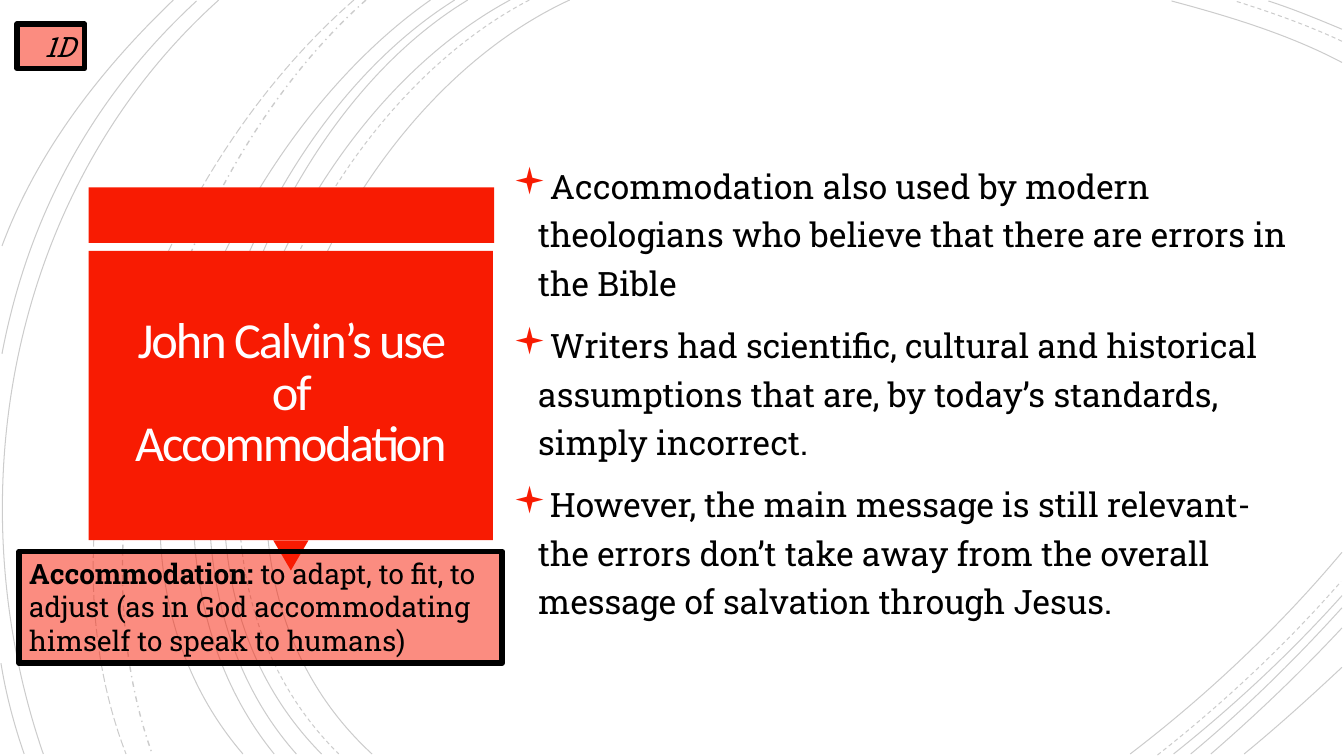
"""Build the slide on John Calvin's use of accommodation."""
from dataclasses import dataclass
from typing import Any, NamedTuple

from pptx import Presentation
from pptx.dml.color import RGBColor as Rgb
from pptx.enum.dml import MSO_LINE as Dash
from pptx.enum.shapes import MSO_SHAPE as Preset
from pptx.enum.text import MSO_ANCHOR as Anchor, PP_ALIGN as Align
from pptx.oxml.ns import qn
from pptx.oxml.xmlchemy import OxmlElement as Element
from pptx.util import Inches, Pt

Point = tuple[float, float]
Area = tuple[float, float, float, float]
Format = dict[str, Any]


@dataclass(frozen=True)
class Theme:
    red: str = "F81B02"
    black: str = "000000"
    white: str = "FFFEFF"
    heading_font: str = "Calibri"
    body_font: str = "Roboto Slab"
    bullet_font: str = "Wingdings"
    title_size: int = 36
    body_size: int = 24
    note_size: int = 20
    arc_opacity: int = 20
    note_opacity: int = 50


class Arc(NamedTuple):
    start: Point
    leave: Point
    arrive: Point
    end: Point
    dash: Any = Dash.SOLID
    width: float = 0.75


class Block(NamedTuple):
    area: Area
    preset: Any = Preset.RECTANGLE
    rotation: float = 0


class Note(NamedTuple):
    area: Area
    align: Any
    spans: list[tuple[str, Format]]


THEME = Theme()
ARCS = [
    Arc((5.65, 0), (3.15, 1.15), (1.43, 5.4), (3.69, 7.48)),
    Arc((13.31, 0.62), (12.78, 0.34), (12.18, 0.16), (11.62, 0.01)),
    Arc((11.21, 7.48), (11.97, 6.9), (12.69, 6.22), (13.31, 5.48)),
    Arc((5.25, 0), (2.85, 1.25), (1.23, 5.37), (3.36, 7.48), Dash.DASH),
    Arc((13.31, 0.41), (12.97, 0.25), (12.6, 0.12), (12.25, 0.01), Dash.DASH),
    Arc((11.48, 7.49), (12.13, 6.98), (12.75, 6.4), (13.3, 5.77), Dash.DASH),
    Arc((5.06, 0), (2.7, 1.27), (1.1, 5.37), (3.19, 7.48)),
    Arc((13.31, 0.29), (13.07, 0.19), (12.83, 0.09), (12.58, 0.01)),
    Arc((11.64, 7.48), (12.23, 7.01), (12.8, 6.48), (13.31, 5.91)),
    Arc((4.64, 0), (2.44, 1.33), (1.1, 5.41), (2.94, 7.48)),
    Arc((11.81, 7.48), (12.34, 7.04), (12.84, 6.55), (13.31, 6.03)),
    Arc((4.51, 0), (2.31, 1.38), (0.97, 5.33), (2.72, 7.48)),
    Arc((12.01, 7.48), (12.46, 7.09), (12.9, 6.67), (13.31, 6.23)),
    Arc((4.27, 0), (2.17, 1.47), (0.53, 5.29), (2.41, 7.48)),
    Arc((12.34, 7.48), (12.67, 7.21), (12.99, 6.92), (13.31, 6.62)),
    Arc((3.63, 0), (1.76, 1.66), (0.65, 5.09), (1.51, 7.48), Dash.DASH_DOT, 1),
    Arc((3.51, 0), (1.57, 1.69), (0.29, 4.99), (1.25, 7.48), Dash.LONG_DASH),
    Arc((2.17, 0), (0.11, 1.85), (-0.46, 4.9), (0.43, 7.48)),
    Arc((1.95, 0.01), (0.92, 0.96), (0.28, 2.14), (0.02, 3.51)),
    Arc((0.01, 6.58), (0.06, 6.89), (0.14, 7.19), (0.24, 7.48)),
    Arc((1.72, 0), (1, 0.69), (0.37, 1.5), (0.02, 2.44)),
]
BLOCKS = [
    Block((0.88, 1.86, 4.02, 0.55)),
    Block((2.71, 5.36, 0.35, 0.3), Preset.ISOSCELES_TRIANGLE, 180),
    Block((0.88, 2.49, 4.01, 2.87)),
]
NOTES = [
    Note((0.17, 0.24, 0.67, 0.44), Align.RIGHT, [("1D", {"italic": True})]),
    Note((0.19, 5.47, 4.79, 1.11), Align.LEFT, [
        ("Accommodation: ", {"bold": True}),
        ("to adapt, to fit, to adjust (as in God accommodating himself to speak to humans)", {}),
    ]),
]
TITLE = "John Calvin’s use of Accommodation"
POINTS = [
    "Accommodation also used by modern theologians who believe that there are errors in the Bible",
    "Writers had scientific, cultural and historical assumptions that are, by today’s standards, simply incorrect.",
    "However, the main message is still relevant- the errors don’t take away from the overall message "
    "of salvation through Jesus.",
]


def apply_format(target: Any, values: Format) -> None:
    for name, value in values.items():
        setattr(target, name, value)


def add_child(parent: Any, tag: str, **values: str) -> Any:
    child = Element(tag)
    for name, value in values.items():
        child.set(name, value)
    parent.append(child)
    return child


def set_opacity(shape: Any, percent: int) -> None:
    for colour in shape._element.iter(qn("a:srgbClr")):
        add_child(colour, "a:alpha", val=str(percent * 1000))


def add_span(para: Any, text: str, size: int, family: str, colour: str, font: Format) -> Any:
    span = para.add_run()
    span.text = text
    apply_format(span.font, {"size": Pt(size), "name": family, **font})
    span.font.color.rgb = Rgb.from_string(colour)
    return span


def add_bullet(para: Any) -> None:
    properties = para._p.get_or_add_pPr()
    properties.set("marL", str(Inches(0.25)))
    properties.set("indent", str(Inches(-0.25)))
    add_child(add_child(properties, "a:buClr"), "a:srgbClr", val=THEME.red)
    add_child(properties, "a:buSzPct", val="110000")
    add_child(properties, "a:buFont", typeface=THEME.bullet_font, pitchFamily="2", charset="2")
    add_child(properties, "a:buChar", char="▪")


def draw_arc(page: Any, arc: Arc) -> None:
    start, *others = [(Inches(x), Inches(y)) for x, y in arc[:4]]
    builder = page.shapes.build_freeform(*start)
    builder.add_line_segments(others, close=False)
    curve = builder.convert_to_shape()
    segments = list(curve._element.iter(qn("a:lnTo")))
    bend = add_child(segments[0].getparent(), "a:cubicBezTo")
    for segment in segments:
        bend.extend(list(segment))
        segment.getparent().remove(segment)
    curve.shadow.inherit = False
    curve.fill.background()
    curve.line.color.rgb = Rgb.from_string(THEME.black)
    apply_format(curve.line, {"width": Pt(arc.width), "dash_style": arc.dash})
    set_opacity(curve, THEME.arc_opacity)


def draw_block(page: Any, block: Block) -> Any:
    shape = page.shapes.add_shape(block.preset, *map(Inches, block.area))
    shape.shadow.inherit = False
    shape.rotation = block.rotation
    shape.fill.solid()
    shape.fill.fore_color.rgb = Rgb.from_string(THEME.red)
    shape.line.fill.background()
    return shape


def draw_note(page: Any, note: Note) -> None:
    box = draw_block(page, Block(note.area))
    set_opacity(box, THEME.note_opacity)
    box.line.color.rgb = Rgb.from_string(THEME.black)
    box.line.width = Pt(4)
    apply_format(box.text_frame, {"word_wrap": True, "vertical_anchor": Anchor.TOP})
    para = box.text_frame.paragraphs[0]
    para.alignment = note.align
    for text, font in note.spans:
        add_span(para, text, THEME.note_size, THEME.body_font, THEME.black, font)


def add_frame(page: Any, area: Area) -> Any:
    frame = page.shapes.add_textbox(*map(Inches, area)).text_frame
    apply_format(frame, {"word_wrap": True, "vertical_anchor": Anchor.MIDDLE})
    return frame


def draw_title(page: Any) -> None:
    frame = add_frame(page, (0.97, 2.57, 3.83, 2.69))
    apply_format(frame, {f"margin_{side}": Inches(0.25) for side in ("left", "top", "right", "bottom")})
    para = frame.paragraphs[0]
    apply_format(para, {"alignment": Align.CENTER, "line_spacing": 0.85})
    span = add_span(para, TITLE, THEME.title_size, THEME.heading_font, THEME.white, {})
    span._r.get_or_add_rPr().set("spc", "-150")


def draw_points(page: Any) -> None:
    frame = add_frame(page, (4.99, 0.47, 8, 6.79))
    for index, text in enumerate(POINTS):
        para = frame.add_paragraph() if index else frame.paragraphs[0]
        apply_format(para, {"line_spacing": 1.2, "space_before": Pt(10)})
        add_bullet(para)
        add_span(para, text, THEME.body_size, THEME.body_font, THEME.black, {})


def main() -> None:
    deck = Presentation()
    apply_format(deck, {"slide_width": Inches(13.33), "slide_height": Inches(7.5)})
    page = deck.slides.add_slide(deck.slide_layouts[6])
    for draw, items in ((draw_arc, ARCS), (draw_block, BLOCKS)):
        for item in items:
            draw(page, item)
    draw_title(page)
    draw_points(page)
    for note in NOTES:
        draw_note(page, note)
    deck.save("out.pptx")


if __name__ == "__main__":
    main()
